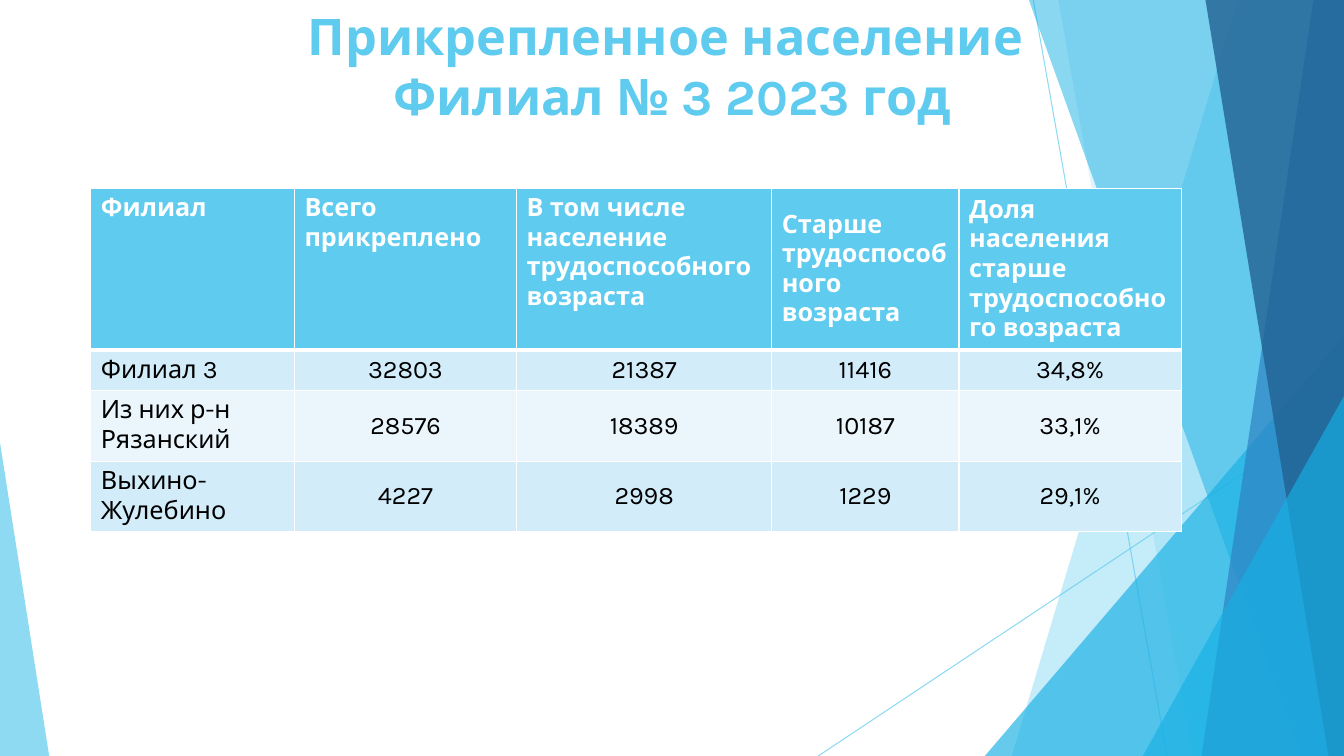
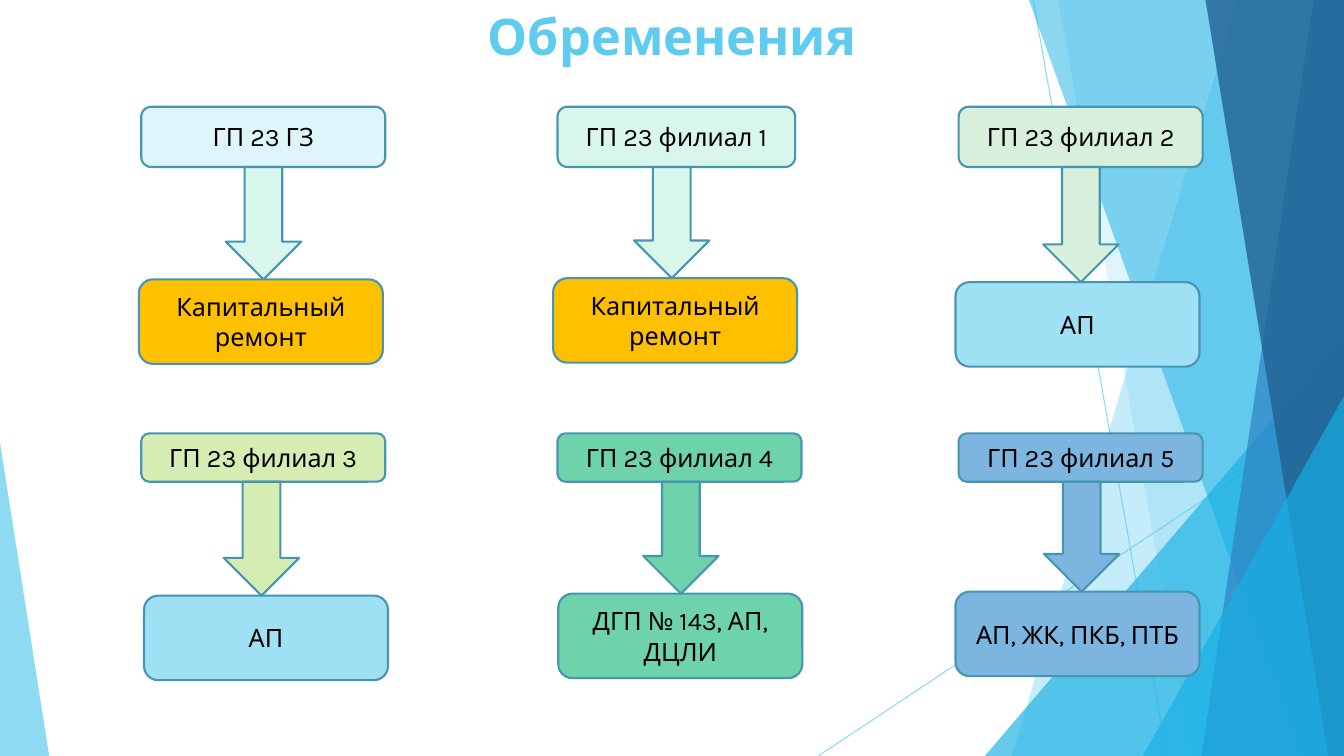
from lxml.etree import SubElement as Sub
from pptx import Presentation
from pptx.dml.color import RGBColor as Rgb
from pptx.enum.shapes import MSO_CONNECTOR as Link, MSO_SHAPE as Kind
from pptx.enum.text import MSO_ANCHOR as Anchor, PP_ALIGN as Align
from pptx.oxml.ns import qn
from pptx.util import Cm, Pt

WIDE, HIGH = 33.87, 19.05
FONT = "Karla"
HUE = {
    "sky": "5FCBEF", "cyan": "17B0E4", "blue": "2E83C3", "navy": "226292",
    "white": "FFFFFF", "black": "000000", "edge": "4696B1",
    "odd": "D2ECF9", "even": "EAF6FC",
    "ice": "DFF5FC", "mint": "D9F6EC", "sage": "D8F0DB", "lime": "D5EDB3",
    "green": "6ED2AA", "steel": "7CB5E0", "gold": "FFC000", "aqua": "9FE0F5",
}

# Backdrop parts from back to front: (top x, foot x, colour, opacity)
# for a band, (left, top, colour, opacity) for a wedge
BACK = [
    ("band", 31.19, 25.5, "sky", 36),
    ("band", 26.67, 30.05, "sky", 20),
    ("wedge", 24.82, 8.46, "cyan", 66),
    ("band", 25.93, 32.79, "cyan", 50),
    ("band", 33.1, 30.28, "blue", 70),
    ("band", 30.38, 33.48, "navy", 80),
    ("wedge", 28.8, 9.98, "cyan", 66),
]
RAYS = [(26.04, 0, 29.41, HIGH), (WIDE, 10.24, 20.62, HIGH)]

HEAD = ["Филиал", "Всего прикреплено",
        "В том числе население трудоспособного возраста",
        "Старше трудоспособного возраста",
        "Доля населения старше трудоспособного возраста"]
ROWS = [
    ["Филиал 3", "32803", "21387", "11416", "34,8%"],
    ["Из них р-н Рязанский", "28576", "18389", "10187", "33,1%"],
    ["Выхино-Жулебино", "4227", "2998", "1229", "29,1%"],
]
COLS = [5.13, 5.6, 6.43, 4.72, 5.6]
TALL = [3.98, 1.03, 1.74, 1.74]

# Columns, then rows as (top, height of the upper box)
LEFTS = [3.56, 14.05, 24.16]
TIERS = [(2.69, 1.52), (10.92, 1.22)]
# Upper text, fill, width; arrow fill, shift; lower text, fill, shift, drop
PAIRS = [
    ("ГП 23 ГЗ", "ice", 6.15, "mint", 2.13,
     "Капитальный ремонт", "gold", -0.06, 4.35),
    ("ГП 23 филиал 1", "mint", 5.99, "mint", 1.93,
     "Капитальный ремонт", "gold", -0.11, 4.32),
    ("ГП 23 филиал 2", "sage", 6.15, "sage", 2.13,
     "АП", "aqua", -0.08, 4.42),
    ("ГП 23 филиал 3", "lime", 6.15, "lime", 2.08,
     "АП", "aqua", 0.07, 4.09),
    ("ГП 23 филиал 4", "green", 6.15, "green", 2.16,
     "ДГП № 143, АП, ДЦЛИ", "green", 0.02, 4.04),
    ("ГП 23 филиал 5", "steel", 6.15, "steel", 2.15,
     "АП, ЖК, ПКБ, ПТБ", "steel", -0.08, 3.99),
]


def rgb(name):
    return Rgb.from_string(HUE[name])


def fade(item, part):
    for tint in item._element.iter(qn("a:srgbClr")):
        Sub(tint, qn("a:alpha"), val=str(part * 1000))


def paint(item, hue, edge=None):
    item.shadow.inherit = False
    item.fill.solid()
    item.fill.fore_color.rgb = rgb(hue)
    if edge:
        item.line.color.rgb = rgb(edge)
        item.line.width = Pt(1.5)
    else:
        item.line.fill.background()


def write(frame, text, size, hue, bold=False, align=Align.CENTER):
    frame.text = text
    for para in frame.paragraphs:
        para.alignment = align
        for run in para.runs:
            font = run.font
            font.name, font.size, font.bold = FONT, Pt(size), bold
            font.color.rgb = rgb(hue)


# Shared backdrop
def ray(slide, x1, y1, x2, y2):
    line = slide.shapes.add_connector(
        Link.STRAIGHT, Cm(x1), Cm(y1), Cm(x2), Cm(y2))
    line.line.color.rgb = rgb("sky")
    line.line.width = Pt(0.75)
    fade(line, 70)
    Sub(line._element.spPr, qn("a:effectLst"))


def band(slide, top, foot, hue, part):
    pen = slide.shapes.build_freeform(Cm(top), 0)
    pen.add_line_segments(
        [(Cm(WIDE), 0), (Cm(WIDE), Cm(HIGH)), (Cm(foot), Cm(HIGH))])
    item = pen.convert_to_shape()
    paint(item, hue)
    fade(item, part)


def wedge(slide, x, y, hue, part, wide=None, peak=1):
    item = slide.shapes.add_shape(
        Kind.ISOSCELES_TRIANGLE, Cm(x), Cm(y), Cm(wide or WIDE - x), Cm(HIGH - y))
    item.adjustments[0] = peak
    paint(item, hue)
    fade(item, part)


def back(slide):
    for ends in RAYS:
        ray(slide, *ends)
    for kind, *rest in BACK:
        (band if kind == "band" else wedge)(slide, *rest)
    wedge(slide, 0, 11.15, "sky", 70, wide=1.24, peak=0)


def start(deck, title, high):
    slide = deck.slides.add_slide(deck.slide_layouts[6])
    back(slide)
    box = slide.shapes.add_textbox(0, 0, Cm(WIDE), Cm(high))
    box.text_frame.word_wrap = True
    write(box.text_frame, title, 36, "sky", True)
    return slide


# Table
def rule(cell, head):
    for side in "LRTB":
        width = Pt(3 if head and side == "B" else 1)
        line = Sub(cell._tc.get_or_add_tcPr(), qn("a:ln" + side), w=str(width))
        Sub(Sub(line, qn("a:solidFill")), qn("a:srgbClr"), val=HUE["white"])


def grid(slide, x, y):
    data = [HEAD] + ROWS
    table = slide.shapes.add_table(
        len(data), len(COLS), Cm(x), Cm(y), Cm(sum(COLS)), Cm(sum(TALL))).table
    for col, width in zip(table.columns, COLS):
        col.width = Cm(width)
    for r, (row, high) in enumerate(zip(data, TALL)):
        table.rows[r].height = Cm(high)
        for c, text in enumerate(row):
            cell, head = table.cell(r, c), r == 0
            rule(cell, head)
            cell.fill.solid()
            cell.fill.fore_color.rgb = rgb(
                "sky" if head else "odd" if r % 2 else "even")
            middle = c > 2 if head else c > 0
            cell.vertical_anchor = Anchor.MIDDLE if middle else Anchor.TOP
            write(cell.text_frame, text, 18, "white" if head else "black", head,
                  Align.LEFT if head or c == 0 else Align.CENTER)


# Two boxes joined by an arrow
def block(slide, kind, x, y, wide, high, hue, text=""):
    item = slide.shapes.add_shape(kind, Cm(x), Cm(y), Cm(wide), Cm(high))
    paint(item, hue, "edge")
    if text:
        item.text_frame.vertical_anchor = Anchor.MIDDLE
        write(item.text_frame, text, 18, "black")


def pair(slide, x, y, high, name, hue, wide, dart, dx, note, tone, shift, drop):
    block(slide, Kind.ROUNDED_RECTANGLE, x, y, wide, high, hue, name)
    block(slide, Kind.ROUNDED_RECTANGLE, x + shift, y + drop, 6.15, 2.13, tone, note)
    block(slide, Kind.DOWN_ARROW, x + dx, y + high, 1.9, drop - high, dart)


def main():
    deck = Presentation()
    deck.slide_width, deck.slide_height = Cm(WIDE), Cm(HIGH)

    slide = start(deck, "Прикрепленное население \nФилиал № 3 2023 год", 2.77)
    grid(slide, 2.29, 4.75)

    slide = start(deck, "Обременения", 1.42)
    for i, parts in enumerate(PAIRS):
        top, high = TIERS[i // 3]
        pair(slide, LEFTS[i % 3], top, high, *parts)

    deck.save("out.pptx")


if __name__ == "__main__":
    main()
